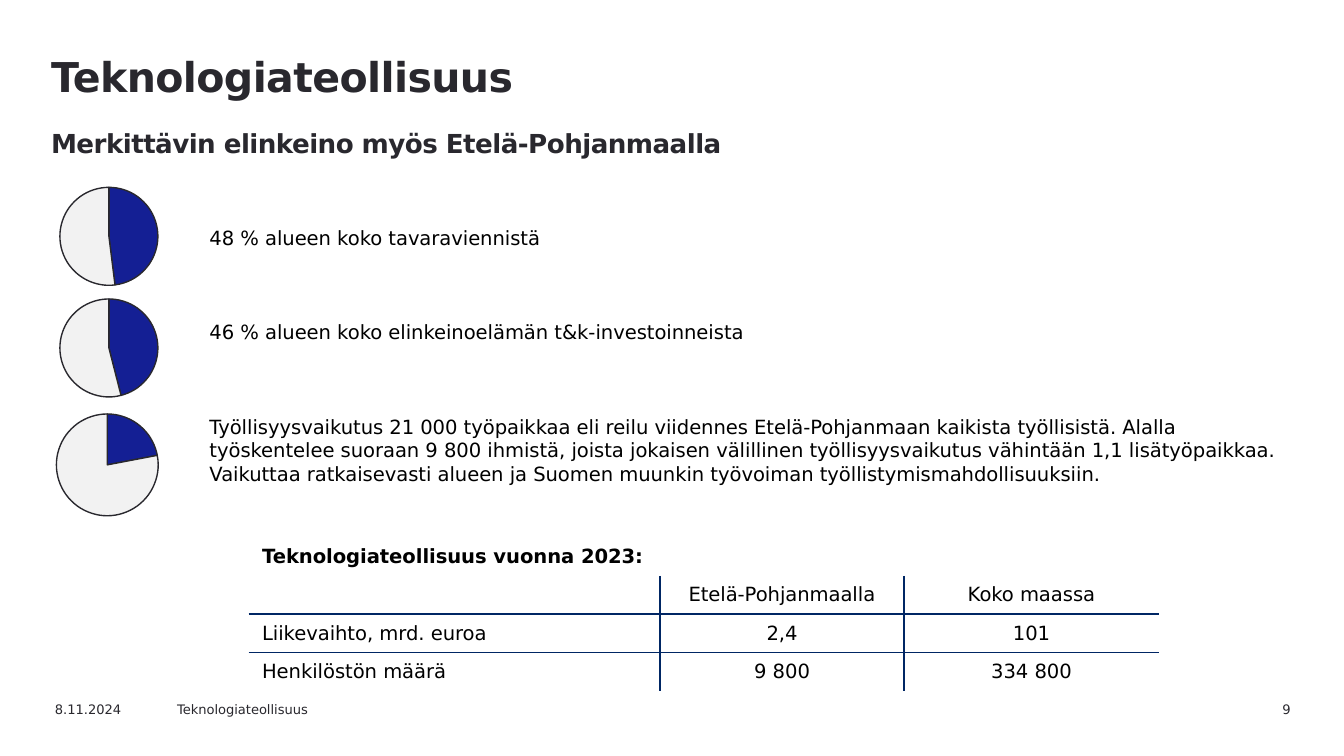
"""Build the slide on the technology industry in Etelä-Pohjanmaa."""
import lxml.etree
import pptx
import pptx.chart.data
import pptx.dml.color
import pptx.enum.chart
import pptx.enum.text
import pptx.oxml
import pptx.oxml.ns
import pptx.util

Cm = pptx.util.Cm
Pt = pptx.util.Pt
qn = pptx.oxml.ns.qn
ALIGN = pptx.enum.text.PP_ALIGN
FONT = "DejaVu Sans"
DARK, BLACK, BLUE, PALE, RULE = "29282E", "000000", "141F94", "F2F2F2", "002664"


def color(value):
    return pptx.dml.color.RGBColor.from_string(value)


def add_text(paragraph, text, size, ink, bold=False, align=ALIGN.LEFT):
    paragraph.alignment = align
    run = paragraph.add_run()
    run.text = text
    run.font.name = FONT
    run.font.size = Pt(size)
    run.font.bold = bold
    run.font.color.rgb = color(ink)
    return run


deck = pptx.Presentation()
deck.slide_width, deck.slide_height = Cm(25.4), Cm(14.29)
slide = deck.slides.add_slide(deck.slide_layouts[5])

heading = slide.shapes.title
heading.left, heading.top, heading.width, heading.height = Cm(0.71), Cm(0.79), Cm(22.2), Cm(2.3)
heading_frame = heading.text_frame
heading_frame.word_wrap = True
heading_frame.auto_size = pptx.enum.text.MSO_AUTO_SIZE.NONE
heading_frame.vertical_anchor = pptx.enum.text.MSO_ANCHOR.TOP
heading_frame.margin_top = Cm(0.16)
heading_lines = [("Teknologiateollisuus", 22, 0), ("Merkittävin elinkeino myös Etelä-Pohjanmaalla", 14, 4)]
for index, (text, size, gap) in enumerate(heading_lines):
    line = heading_frame.add_paragraph() if index else heading_frame.paragraphs[0]
    line.line_spacing = Pt(27)
    line.space_before = Pt(gap)
    add_text(line, text, size, DARK, True).font._element.set("spc", "-30")

footers = [
    ("8.11.2024", 0.79, 2.54, ALIGN.LEFT),
    ("Teknologiateollisuus", 3.1, 3.6, ALIGN.LEFT),
    ("9", 22.25, 2.39, ALIGN.RIGHT),
]
for text, left, width, align in footers:
    footer = slide.shapes.add_textbox(Cm(left), Cm(13.13), Cm(width), Cm(0.46)).text_frame
    footer.word_wrap = True
    add_text(footer.paragraphs[0], text, 7, DARK, align=align)

facts = [
    "48 % alueen koko tavaraviennistä",
    "46 % alueen koko elinkeinoelämän t&k-investoinneista",
    "Työllisyysvaikutus 21 000 työpaikkaa eli reilu viidennes Etelä-Pohjanmaan kaikista työllisistä. "
    "Alalla työskentelee suoraan 9 800 ihmistä, joista jokaisen välillinen työllisyysvaikutus "
    "vähintään 1,1 lisätyöpaikkaa. Vaikuttaa ratkaisevasti alueen ja Suomen muunkin työvoiman "
    "työllistymismahdollisuuksiin.",
]
fact_frame = slide.shapes.add_textbox(Cm(3.71), Cm(4.14), Cm(20.8), Cm(6.15)).text_frame
fact_frame.word_wrap = True
for index, fact in enumerate(facts):
    line = fact_frame.add_paragraph() if index else fact_frame.paragraphs[0]
    line.space_before = Pt(38 if index else 0)
    add_text(line, fact, 10.5, BLACK)

for share, left, top, side in [(48, 0.79, 3.2, 2.54), (46, 0.79, 5.31, 2.54), (22, 0.71, 7.47, 2.64)]:
    shares = pptx.chart.data.CategoryChartData()
    shares.categories = ["1", "2"]
    shares.add_series("Series 1", (share, 100 - share))
    pie = slide.shapes.add_chart(
        pptx.enum.chart.XL_CHART_TYPE.PIE, Cm(left), Cm(top), Cm(side), Cm(side), shares
    ).chart
    pie.has_legend = False
    pie.has_title = False
    pie.font.name = FONT
    pie.font.size = Pt(18)
    pie.font.color.rgb = color(DARK)
    pie.plots[0].vary_by_categories = True
    for index, fill in enumerate([BLUE, PALE]):
        sector = pie.plots[0].series[0].points[index].format
        sector.fill.solid()
        sector.fill.fore_color.rgb = color(fill)
        sector.line.color.rgb = color(DARK)
        sector.line.width = Pt(0.75)
    plot_area = pie._chartSpace.chart.plotArea
    for old_layout in plot_area.findall(qn("c:layout")):
        plot_area.remove(old_layout)
    layout = lxml.etree.Element(qn("c:layout"))
    manual = lxml.etree.SubElement(layout, qn("c:manualLayout"))
    settings = [("layoutTarget", "inner"), ("xMode", "edge"), ("yMode", "edge"),
                ("x", "0.135"), ("y", "0.135"), ("w", "0.73"), ("h", "0.73")]
    for name, value in settings:
        lxml.etree.SubElement(manual, qn("c:" + name), val=value)
    plot_area.insert(0, layout)

figures = [
    ("Teknologiateollisuus vuonna 2023:", "", ""),
    ("", "Etelä-Pohjanmaalla", "Koko maassa"),
    ("Liikevaihto, mrd. euroa", "2,4", "101"),
    ("Henkilöstön määrä", "9 800", "334 800"),
]
table = slide.shapes.add_table(4, 3, Cm(4.7), Cm(10.16), Cm(17.2), Cm(2.9)).table
table.first_row = table.horz_banding = False
table._tbl.tblPr[0].text = "{2D5ABB26-0587-4C30-8999-92F81FD0307C}"
for column, width in zip(table.columns, [7.77, 4.62, 4.81]):
    column.width = Cm(width)
for row_index, row in enumerate(figures):
    table.rows[row_index].height = Cm(0.725)
    for column_index, text in enumerate(row):
        cell = table.cell(row_index, column_index)
        cell.fill.background()
        cell.vertical_anchor = pptx.enum.text.MSO_ANCHOR.MIDDLE
        entry = cell.text_frame.paragraphs[0]
        if text:
            add_text(entry, text, 10.5, BLACK, row_index == 0, ALIGN.CENTER if column_index else ALIGN.LEFT)
        else:
            lxml.etree.SubElement(entry._p, qn("a:endParaRPr"), sz="1050")
        ruled = {
            "L": row_index > 0 and column_index > 0,
            "R": row_index > 0 and column_index < 2,
            "T": row_index > 1,
            "B": row_index in (1, 2),
        }
        properties = cell._tc.get_or_add_tcPr()
        for position, side in enumerate(ruled):
            border = lxml.etree.Element(qn("a:ln" + side), w=str(Pt(1)))
            if ruled[side]:
                paint = lxml.etree.SubElement(border, qn("a:solidFill"))
                lxml.etree.SubElement(paint, qn("a:srgbClr"), val=RULE)
            else:
                lxml.etree.SubElement(border, qn("a:noFill"))
            properties.insert(position, border)
table.cell(0, 0).merge(table.cell(0, 2))

deck.save("out.pptx")
